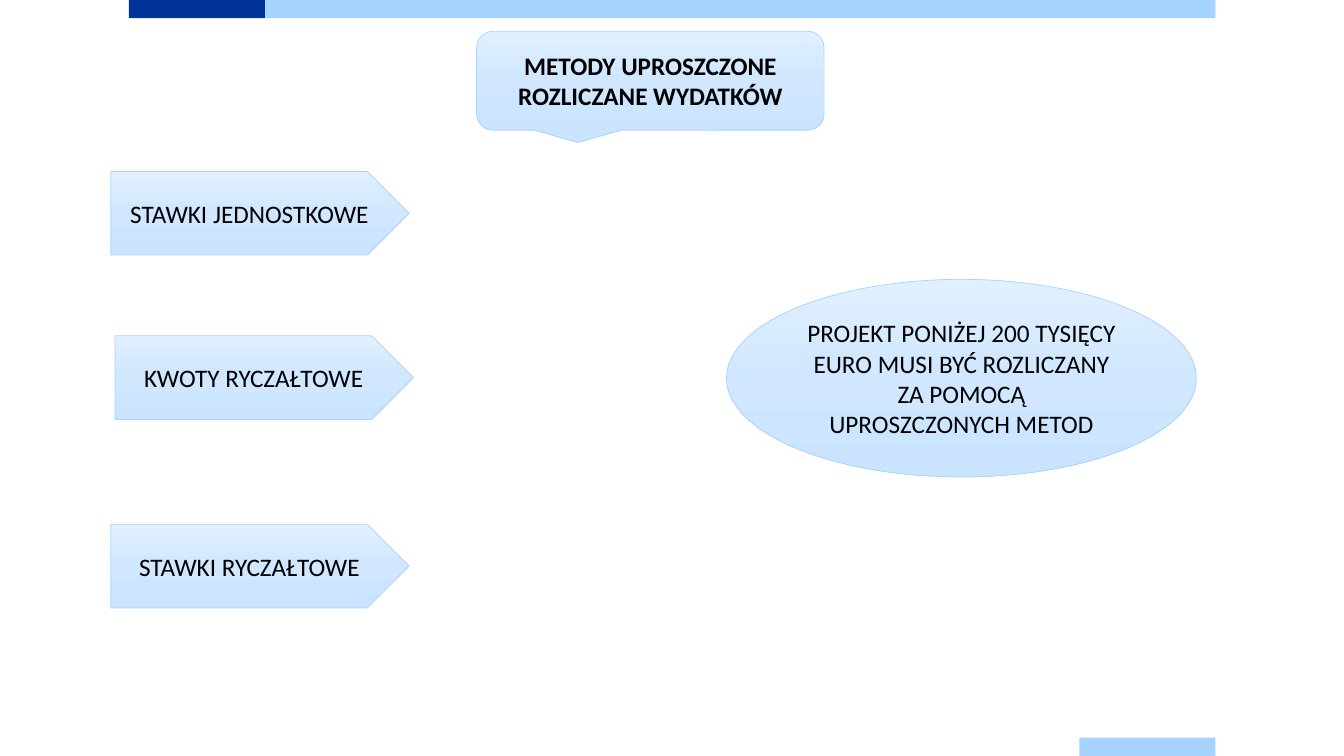
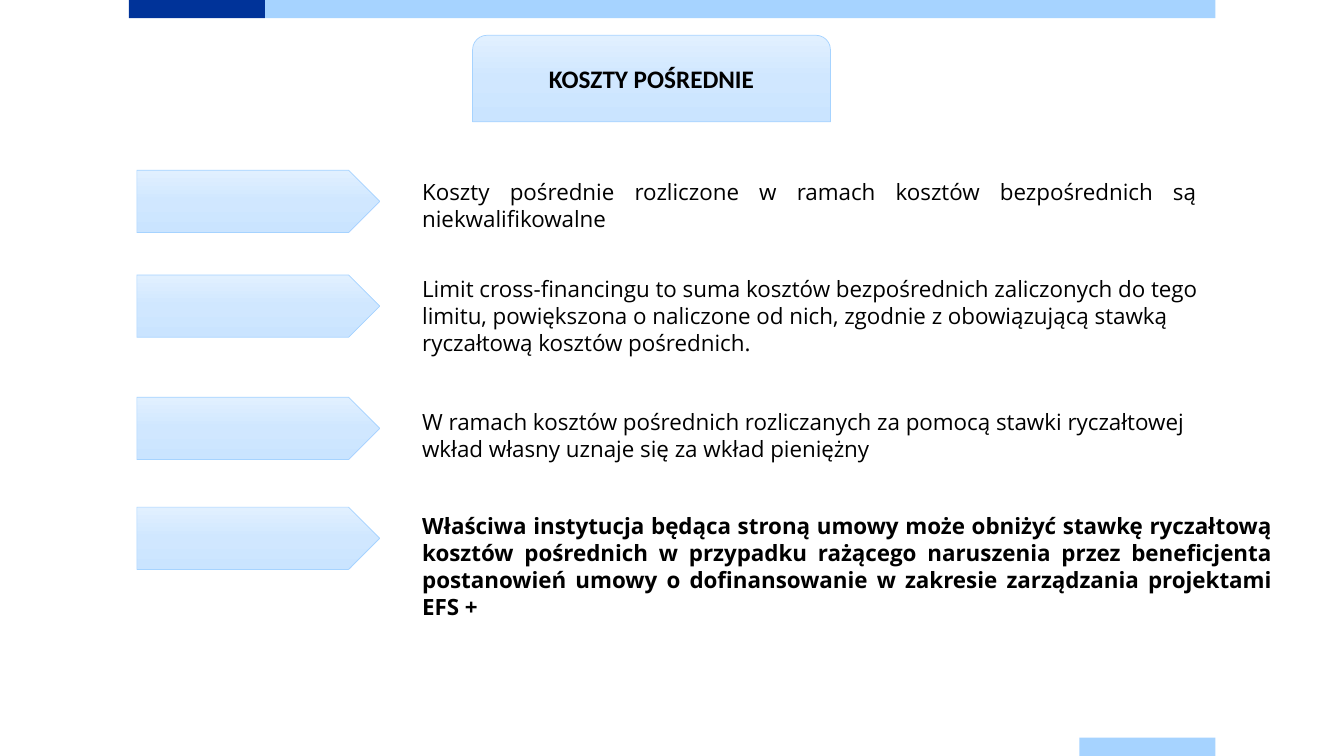
"""Build two slides on simplified cost settlement methods and indirect costs."""
from copy import deepcopy

from pptx import Presentation, util as u
from pptx.dml.color import RGBColor
from pptx.enum import shapes, text
from pptx.oxml.ns import qn

KIND = shapes.MSO_SHAPE
ALIGN = text.PP_ALIGN
HUES = {"navy": "003399", "sky": "A6D3FF", "ink": "000000",
        "top": "E1F0FF", "mid": "D0E7FF", "low": "CAE4FF"}

BANDS = [
    ("navy", (3.25, 0, 3.43, 0.46)),
    ("sky", (6.68, 0, 23.95, 0.46)),
    ("sky", (27.2, 18.59, 3.43, 0.46)),
]
HEADS = [
    ("METODY UPROSZCZONE ROZLICZANE WYDATKÓW",
     KIND.ROUNDED_RECTANGULAR_CALLOUT, (12.01, 0.79, 8.76, 2.49)),
    ("KOSZTY POŚREDNIE",
     KIND.ROUND_2_SAME_RECTANGLE, (11.91, 0.89, 9.02, 2.18)),
]
METHODS = [
    ("STAWKI JEDNOSTKOWE", 2.79, 4.32),
    ("KWOTY RYCZAŁTOWE", 2.9, 8.46),
    ("STAWKI RYCZAŁTOWE", 2.79, 13.21),
]
LIMIT = ("PROJEKT PONIŻEJ 200 TYSIĘCY EURO MUSI BYĆ ROZLICZANY "
         "ZA POMOCĄ UPROSZCZONYCH METOD")
RULES = [
    ("Koszty pośrednie rozliczone w ramach kosztów bezpośrednich są "
     "niekwalifikowalne",
     4.29, (4.37, 20.02, 1.63), {"align": ALIGN.JUSTIFY}),
    ("Limit cross-financingu to suma kosztów bezpośrednich zaliczonych do tego "
     "limitu, powiększona o naliczone od nich, zgodnie z obowiązującą stawką "
     "ryczałtową kosztów pośrednich.",
     6.93, (6.81, 20.98, 2.31), {}),
    ("W ramach kosztów pośrednich rozliczanych za pomocą stawki ryczałtowej "
     "wkład własny uznaje się za wkład pieniężny",
     10.01, (10.16, 20.02, 1.63), {}),
    ("Właściwa instytucja będąca stroną umowy może obniżyć stawkę ryczałtową "
     "kosztów pośrednich w przypadku rażącego naruszenia przez beneficjenta "
     "postanowień umowy o dofinansowanie w zakresie zarządzania projektami EFS +",
     12.78, (12.78, 21.92, 3), {"align": ALIGN.JUSTIFY, "bold": True}),
]


def hue(name):
    return RGBColor.from_string(HUES[name])


def place(box):
    return [u.Cm(side) for side in box]


def write(shape, words, size=18, font="Calibri", bold=False,
          align=ALIGN.CENTER, anchor=text.MSO_ANCHOR.MIDDLE,
          fit=text.MSO_AUTO_SIZE.NONE, line=None):
    frame = shape.text_frame
    frame.word_wrap = True
    frame.auto_size = fit
    frame.vertical_anchor = anchor
    para = frame.paragraphs[0]
    para.alignment = align
    if line:
        para.line_spacing = u.Pt(line)
    run = para.add_run()
    run.text = words
    run.font.name = font
    run.font.size = u.Pt(size)
    run.font.bold = bold
    run.font.color.rgb = hue("ink")


def block(slide, kind, box):
    """Add a shape with the shared gradient and thin outline."""
    shape = slide.shapes.add_shape(kind, *place(box))
    shape.shadow.inherit = False
    shape.fill.gradient()
    shape.fill.gradient_angle = 270
    first = shape.element.spPr.find(".//" + qn("a:gs"))
    first.addnext(deepcopy(first))
    stops = zip(shape.fill.gradient_stops, ("top", "mid", "low"), (0, 0.5, 1))
    for stop, name, pos in stops:
        stop.color.rgb = hue(name)
        stop.position = pos
    shape.line.color.rgb = hue("sky")
    shape.line.width = u.Pt(0.5)
    return shape


def brand(slide):
    """Put the bands on the layout that the slides share."""
    tree = slide.slide_layout.shapes.element
    for name, box in BANDS:
        band = slide.shapes.add_shape(KIND.RECTANGLE, *place(box))
        band.shadow.inherit = False
        band.fill.solid()
        band.fill.fore_color.rgb = hue(name)
        band.line.fill.background()
        tree.insert(2, band.element)


def start(deck, words, kind, box):
    slide = deck.slides.add_slide(deck.slide_layouts[5])
    title = slide.shapes.title
    plate = block(slide, kind, box)
    title.element.addprevious(plate.element)
    title.left, title.top, title.width, title.height = place(box)
    write(title, words, bold=True)
    return slide


def main():
    deck = Presentation()
    deck.slide_width, deck.slide_height = u.Cm(33.87), u.Cm(19.05)
    first, second = [start(deck, *head) for head in HEADS]
    brand(first)

    for words, left, top in METHODS:
        write(block(first, KIND.PENTAGON, (left, top, 7.52, 2.11)), words)
    write(block(first, KIND.OVAL, (18.31, 7.04, 11.84, 4.98)), LIMIT)

    for words, level, (top, width, height), style in RULES:
        block(second, KIND.PENTAGON, (3.45, level, 6.12, 1.57))
        note = second.shapes.add_textbox(*place((10.39, top, width, height)))
        look = {"size": 16, "font": "Open Sans", "align": ALIGN.LEFT,
                "anchor": text.MSO_ANCHOR.TOP, "line": 19.2,
                "fit": text.MSO_AUTO_SIZE.SHAPE_TO_FIT_TEXT}
        write(note, words, **{**look, **style})

    deck.save("out.pptx")


if __name__ == "__main__":
    main()
